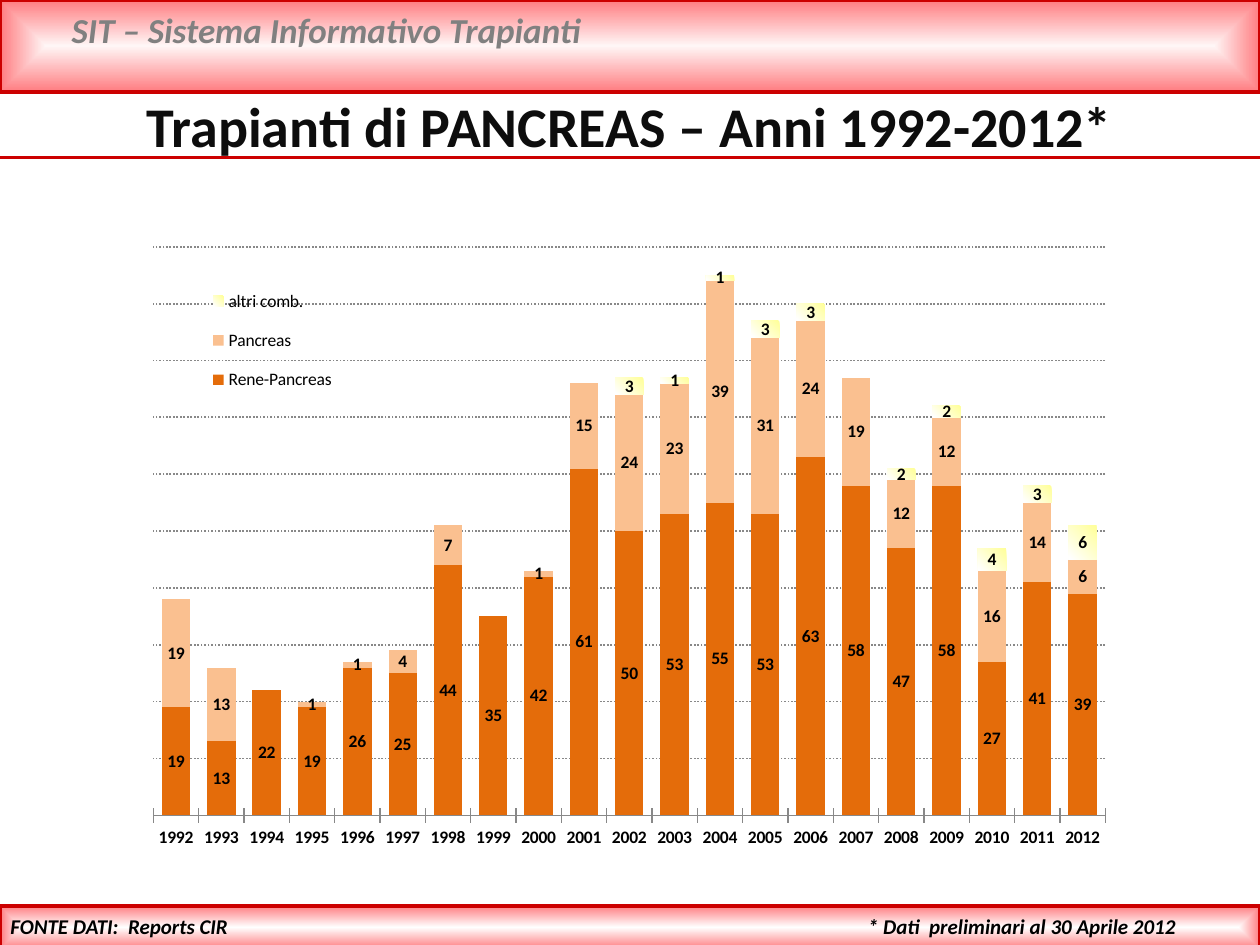
from dataclasses import dataclass

from lxml import etree
from pptx import Presentation
from pptx.chart.data import CategoryChartData as Data
from pptx.dml.color import RGBColor as RGB
from pptx.enum.chart import XL_CHART_TYPE as KIND, XL_LEGEND_POSITION as SIDE
from pptx.enum.chart import XL_LABEL_POSITION as SPOT, XL_TICK_MARK as TICK
from pptx.enum.dml import MSO_LINE_DASH_STYLE as DASH
from pptx.enum.shapes import MSO_CONNECTOR as LINK, MSO_SHAPE as SHAPE
from pptx.enum.text import MSO_ANCHOR as ANCHOR, MSO_AUTO_SIZE as FIT, PP_ALIGN as ALIGN
from pptx.oxml import parse_xml
from pptx.oxml.ns import nsdecls, qn
from pptx.util import Inches, Pt


@dataclass(frozen=True)
class Theme:
    font: str = "Calibri"
    red: str = "CC0000"
    rose: str = "FF7C80"
    pale: str = "FFF6F6"
    white: str = "FFFFFF"
    gray: str = "808080"
    ink: str = "0D0D0D"
    black: str = "000000"
    grid: str = "888888"
    dark: str = "E46C0A"
    light: str = "FAC090"
    lemon: str = "FFFF99"
    head: int = 20
    title: int = 32
    foot: int = 12
    chart: int = 10
    rule: int = 2


T = Theme()
YEARS = [str(year) for year in range(1992, 2013)]
KIDNEY = [19, 13, 22, 19, 26, 25, 44, 35, 42, 61, 50,
          53, 55, 53, 63, 58, 47, 58, 27, 41, 39]
ALONE = [19, 13, None, 1, 1, 4, 7, None, 1, 15, 24,
         23, 39, 31, 24, 19, 12, 12, 16, 14, 6]
OTHER = [None] * 10 + [3, 1, 1, 3, 3, None, 2, 2, 4, 3, 6]


def color(code):
    return RGB.from_string(code)


def style(font, size, code, bold=False, italic=False):
    font.name, font.size = T.font, Pt(size)
    font.bold, font.italic = bold, italic
    font.color.rgb = color(code)


def blend(fill, first, last, end=1.0):
    fill.gradient()
    for stop, code, place in zip(fill.gradient_stops, (first, last), (0, end)):
        stop.color.rgb = color(code)
        stop.position = place


def write(frame, text, size, code, align=ALIGN.LEFT, italic=True, wrap=True):
    frame.text = text
    frame.word_wrap = wrap
    frame.auto_size = FIT.NONE
    part = frame.paragraphs[0]
    part.alignment = align
    style(part.runs[0].font, size, code, True, italic)


def add_text(slide, box, text, size, code, **more):
    write(slide.shapes.add_textbox(*map(Inches, box)).text_frame,
          text, size, code, **more)


def add_band(slide, box, inner):
    band = slide.shapes.add_shape(SHAPE.RECTANGLE, *map(Inches, box))
    band.shadow.inherit = False
    blend(band.fill, inner, T.rose)
    band.line.color.rgb = color(T.red)
    band.line.width = Pt(T.rule)
    # The blend runs from the middle out to the edges
    grad = band._element.spPr.find(qn("a:gradFill"))
    grad.replace(grad.find(qn("a:lin")), parse_xml(
        f'<a:path {nsdecls("a")} path="rect"><a:fillToRect '
        'l="50000" t="50000" r="50000" b="50000"/></a:path>'))


def add_head(slide, box):
    left, top, width, height = box
    add_band(slide, box, T.pale)
    add_text(slide, (left + 0.47, top + 0.02, width - 1.02, 0.44),
             "SIT – Sistema Informativo Trapianti", T.head, T.gray)


def add_title(slide, box):
    left, top, width, height = box
    title = slide.shapes.title
    title.left, title.top, title.width, title.height = map(Inches, box)
    write(title.text_frame, "Trapianti di PANCREAS – Anni 1992-2012*",
          T.title, T.ink, align=ALIGN.CENTER, italic=False)
    title.text_frame.vertical_anchor = ANCHOR.MIDDLE
    # Red rule under the title
    low = Inches(top + 0.58)
    rule = slide.shapes.add_connector(
        LINK.STRAIGHT, Inches(left), low, Inches(left + width), low)
    rule.line.color.rgb = color(T.red)
    rule.line.width = Pt(T.rule)
    etree.SubElement(rule._element.spPr, qn("a:effectLst"))


def add_foot(slide, box):
    left, top, width, height = box
    add_band(slide, box, T.white)
    add_text(slide, (left - 0.04, top + 0.01, 1.95, 0.3),
             "FONTE DATI:  Reports CIR", T.foot, T.black,
             align=ALIGN.RIGHT, wrap=False)
    add_text(slide, (left + 6.79, top + 0.01, width - 6.79, 0.3),
             "* Dati  preliminari al 30 Aprile 2012", T.foot, T.black)


def make_layout(box, inner=False):
    target = '<c:layoutTarget val="inner"/>' if inner else ""
    modes = "".join(f'<c:{side}Mode val="edge"/>' for side in "xy")
    sizes = "".join(f'<c:{side} val="{part}"/>' for side, part in zip("xywh", box))
    return parse_xml(f'<c:layout {nsdecls("c")}><c:manualLayout>{target}{modes}'
                     f'{sizes}</c:manualLayout></c:layout>')


def drop_layout(item):
    for old in item.findall(qn("c:layout")):
        item.remove(old)


def add_chart(slide, box):
    data = Data()
    data.categories = YEARS
    for name, vals in (("Rene-Pancreas", KIDNEY), ("Pancreas", ALONE),
                       ("altri comb.", OTHER)):
        data.add_series(name, vals)
    chart = slide.shapes.add_chart(
        KIND.COLUMN_STACKED, *map(Inches, box), data).chart
    chart.has_title = False
    style(chart.font, T.chart, T.black)

    # Columns and their labels
    plot = chart.plots[0]
    plot.gap_width, plot.overlap = 60, 100
    plot.vary_by_categories = False
    plot.has_data_labels = True
    labels = plot.data_labels
    labels.show_value = True
    labels.position = SPOT.CENTER
    style(labels.font, T.chart, T.black, True)
    kidney, alone, other = plot.series
    for item, code in ((kidney, T.dark), (alone, T.light)):
        item.format.fill.solid()
        item.format.fill.fore_color.rgb = color(code)
    blend(other.format.fill, T.lemon, T.white, 0.96)
    other.format.fill.gradient_angle = 225

    # Axes and grid
    years, scale = chart.category_axis, chart.value_axis
    years.major_tick_mark = TICK.CROSS
    years.format.line.color.rgb = color(T.grid)
    style(years.tick_labels.font, T.chart, T.black, True)
    scale.visible = False
    scale.minimum_scale, scale.maximum_scale, scale.major_unit = 0, 100, 10
    grid = scale.major_gridlines.format.line
    grid.color.rgb = color(T.grid)
    grid.width = Pt(1)
    grid.dash_style = DASH.ROUND_DOT

    # Legend lies over the empty upper left of the plot
    chart.has_legend = True
    legend = chart.legend
    legend.position = SIDE.LEFT
    legend.include_in_layout = True
    style(legend.font, T.chart, T.black)
    drop_layout(legend._element)
    legend._element.find(qn("c:legendPos")).addnext(
        make_layout((0.05, 0.06, 0.18, 0.22)))
    area = chart._chartSpace.chart.plotArea
    drop_layout(area)
    area.insert(0, make_layout((0.02, 0.02, 0.96, 0.91), True))


def main():
    deck = Presentation()
    deck.slide_width, deck.slide_height = Inches(10), Inches(7.5)
    slide = deck.slides.add_slide(deck.slide_layouts[5])
    add_head(slide, (0, 0, 10, 0.73))
    add_title(slide, (0, 0.67, 10, 0.64))
    add_chart(slide, (1.06, 1.86, 7.87, 4.96))
    add_foot(slide, (0, 7.19, 10, 0.34))
    deck.save("out.pptx")


if __name__ == "__main__":
    main()
